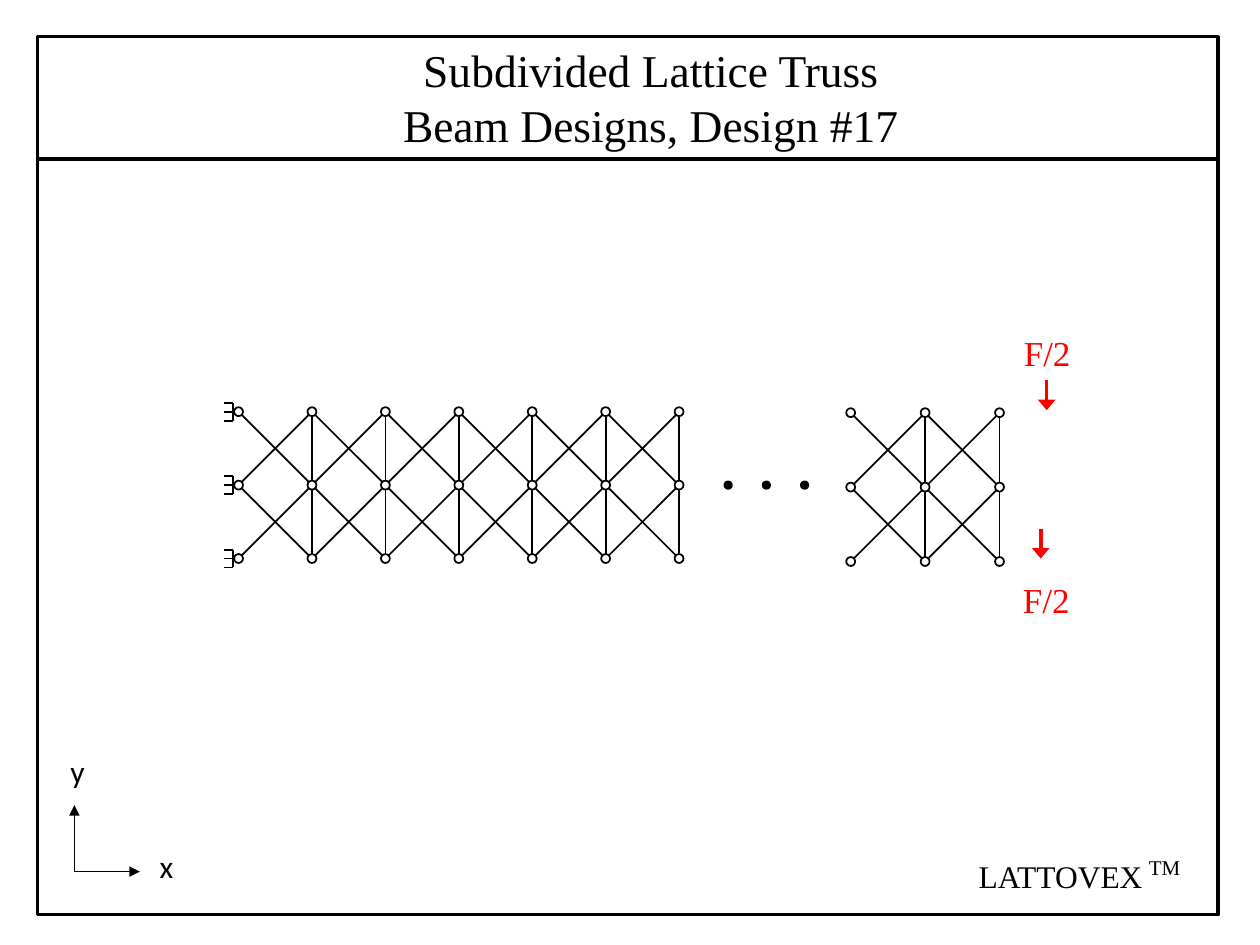
from itertools import product

from lxml import etree
from pptx import Presentation
from pptx import util as u
from pptx.dml.color import RGBColor
from pptx.enum import shapes, text
from pptx.oxml import ns

BLACK = RGBColor(0, 0, 0)
WHITE = RGBColor(255, 255, 255)
RED = RGBColor(255, 0, 0)
SERIF = "Times New Roman"
SANS = "Calibri"
NODE_SIZE = 0.18
PRONG = 0.18


def add_line(page, start, end, width=1, color=BLACK, arrow=None):
    points = [u.Cm(value) for value in (*start, *end)]
    line = page.shapes.add_connector(shapes.MSO_CONNECTOR.STRAIGHT, *points)
    line.line.width = u.Pt(width)
    line.line.color.rgb = color
    if arrow:
        outline = line.line._get_or_add_ln()
        etree.SubElement(outline, ns.qn("a:tailEnd"), type="triangle", w=arrow)
    etree.SubElement(line._element.spPr, ns.qn("a:effectLst"))


def add_circle(page, center, size, fill):
    left, top = (u.Cm(value - size / 2) for value in center)
    circle = page.shapes.add_shape(
        shapes.MSO_SHAPE.OVAL, left, top, u.Cm(size), u.Cm(size))
    circle.shadow.inherit = False
    circle.fill.solid()
    circle.fill.fore_color.rgb = fill
    circle.line.color.rgb = BLACK
    circle.line.width = u.Pt(1)


def format_text(box, size, font, color):
    for paragraph in box.text_frame.paragraphs:
        for span in paragraph.runs:
            span.font.size = u.Pt(size)
            span.font.name = font
            span.font.color.rgb = color


def add_label(page, wording, place, size, font=SERIF, color=BLACK):
    box = page.shapes.add_textbox(*(u.Cm(value) for value in place))
    box.text_frame.text = wording
    box.text_frame.word_wrap = False
    format_text(box, size, font, color)


def add_title(page):
    title = page.shapes.title
    title.left, title.top = u.Cm(7.4), u.Cm(0.71)
    title.width, title.height = u.Cm(11.45), u.Cm(2.49)
    frame = title.text_frame
    frame.text = "Subdivided Lattice Truss\nBeam Designs, Design #17"
    frame.auto_size = text.MSO_AUTO_SIZE.NONE
    frame.vertical_anchor = text.MSO_ANCHOR.MIDDLE
    for paragraph in frame.paragraphs:
        paragraph.alignment = text.PP_ALIGN.CENTER
    format_text(title, 26, SERIF, BLACK)


def add_frame(page):
    frame = page.shapes.add_shape(
        shapes.MSO_SHAPE.RECTANGLE,
        u.Cm(0.76), u.Cm(0.74), u.Cm(23.8), u.Cm(17.7))
    frame.shadow.inherit = False
    frame.fill.background()
    frame.line.color.rgb = BLACK
    frame.line.width = u.Pt(2)
    add_line(page, (0.76, 3.2), (24.56, 3.2), width=2)


def add_truss(page, left, top, pitch, panels):
    def node(column, row):
        return left + column * pitch, top + row * pitch

    for column, row in product(range(panels), range(2)):
        add_line(page, node(column, row), node(column + 1, row + 1))
        add_line(page, node(column, row + 1), node(column + 1, row))
        add_line(page, node(column + 1, row), node(column + 1, row + 1))
    for column, row in product(range(panels + 1), range(3)):
        add_circle(page, node(column, row), NODE_SIZE, WHITE)


def add_support(page, x, y):
    add_line(page, (x, y - PRONG), (x, y + PRONG))
    for offset in (-PRONG, 0, PRONG):
        add_line(page, (x - PRONG, y + offset), (x, y + offset))


def add_axes(page):
    origin = (1.5, 17.57)
    add_line(page, origin, (2.82, 17.57), width=0.5, arrow="med")
    add_line(page, origin, (1.5, 16.23), width=0.5, arrow="med")
    add_label(page, "x", (2.97, 16.95, 0.79, 1.02), 18, SANS)
    add_label(page, "y", (1.17, 15.04, 0.79, 1.02), 18, SANS)


def add_load(page, arrow_x, arrow_top, label_left, label_top):
    add_line(page, (arrow_x, arrow_top), (arrow_x, arrow_top + 0.6),
             width=2, color=RED, arrow="lg")
    add_label(page, "F/2", (label_left, label_top, 1.7, 1.12), 20, color=RED)


def main():
    deck = Presentation()
    deck.slide_width, deck.slide_height = u.Cm(25.4), u.Cm(19.05)
    page = deck.slides.add_slide(deck.slide_layouts[5])
    add_frame(page)
    add_title(page)
    left, top, pitch = 4.81, 8.3, 1.48
    add_truss(page, left, top, pitch, 6)
    add_truss(page, 17.15, 8.32, 1.5, 2)
    for row in range(3):
        add_support(page, left - 0.11, top + row * pitch)
    for step in range(3):
        add_circle(page, (14.68 + step * 0.77, 9.78), 0.15, BLACK)
    add_load(page, 21.1, 7.67, 20.39, 6.56)
    add_load(page, 20.98, 10.66, 20.37, 11.53)
    add_axes(page)
    add_label(page, "LATTOVEX", (19.48, 17.15, 3.86, 1.02), 18)
    add_label(page, "TM", (22.91, 17.1, 1.3, 0.76), 12)
    deck.save("out.pptx")


if __name__ == "__main__":
    main()
